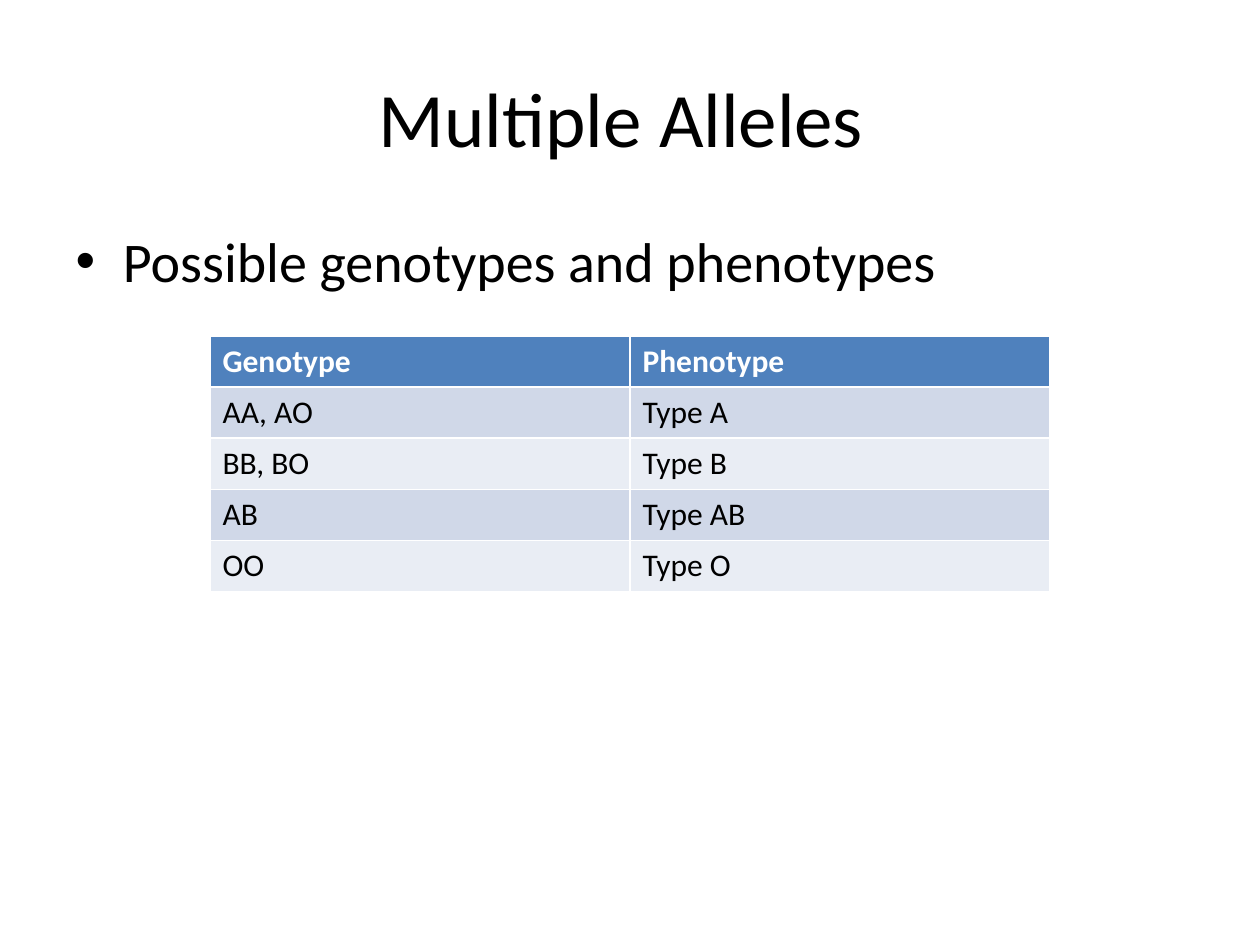
from pptx import Presentation
from pptx.dml.color import RGBColor as RGB
from pptx.enum.text import MSO_ANCHOR as ANCHOR, PP_ALIGN as ALIGN
from pptx.util import Pt

TITLE = "Multiple Alleles "
BULLET = "Possible genotypes and phenotypes"
ROWS = [
    ("Genotype", "Phenotype"),
    ("AA, AO", "Type A"),
    ("BB, BO", "Type B"),
    ("AB", "Type AB"),
    ("OO", "Type O"),
]
COLORS = {"text": "000000", "head_text": "FFFFFF", "head": "4F81BD",
          "odd": "D0D8E8", "even": "E9EDF4"}
BOXES = {"title": (63, 38, 1134, 158), "body": (63, 220, 1134, 624)}
TABLE_X, TABLE_Y, COL_W, ROW_H = 210, 336, 420, 51
FORMATS = {
    "title": {"size": Pt(44), "name": "Calibri"},
    "body": {"size": Pt(32), "name": "Calibri"},
    "head": {"size": Pt(18), "name": "Calibri", "bold": True},
    "cell": {"size": Pt(18), "name": "Calibri", "bold": False},
}


def px(n):
    return round(n * 914400 / 126)


def write(tf, text, style, color):
    p = tf.paragraphs[0]
    r = p.add_run()
    r.text = text
    for key, value in FORMATS[style].items():
        setattr(r.font, key, value)
    r.font.color.rgb = RGB.from_string(COLORS[color])
    return p


def place(sp, box):
    sp.left, sp.top, sp.width, sp.height = map(px, box)


def add_genotype_table(slide):
    n_rows, n_cols = len(ROWS), len(ROWS[0])
    table = slide.shapes.add_table(n_rows, n_cols, px(TABLE_X), px(TABLE_Y),
                                   px(COL_W * n_cols), px(ROW_H * n_rows)).table
    for i, row in enumerate(ROWS):
        fill = "head" if i == 0 else "odd" if i % 2 else "even"
        style, color = ("head", "head_text") if i == 0 else ("cell", "text")
        for j, text in enumerate(row):
            cell = table.cell(i, j)
            cell.fill.solid()
            cell.fill.fore_color.rgb = RGB.from_string(COLORS[fill])
            write(cell.text_frame, text, style, color)


def main():
    prs = Presentation()
    prs.slide_width, prs.slide_height = px(1260), px(945)
    slide = prs.slides.add_slide(prs.slide_layouts[1])
    title, body = slide.placeholders
    place(title, BOXES["title"])
    place(body, BOXES["body"])
    title.text_frame.vertical_anchor = ANCHOR.MIDDLE
    write(title.text_frame, TITLE, "title", "text").alignment = ALIGN.CENTER
    write(body.text_frame, BULLET, "body", "text")
    add_genotype_table(slide)
    prs.save("out.pptx")


if __name__ == "__main__":
    main()
